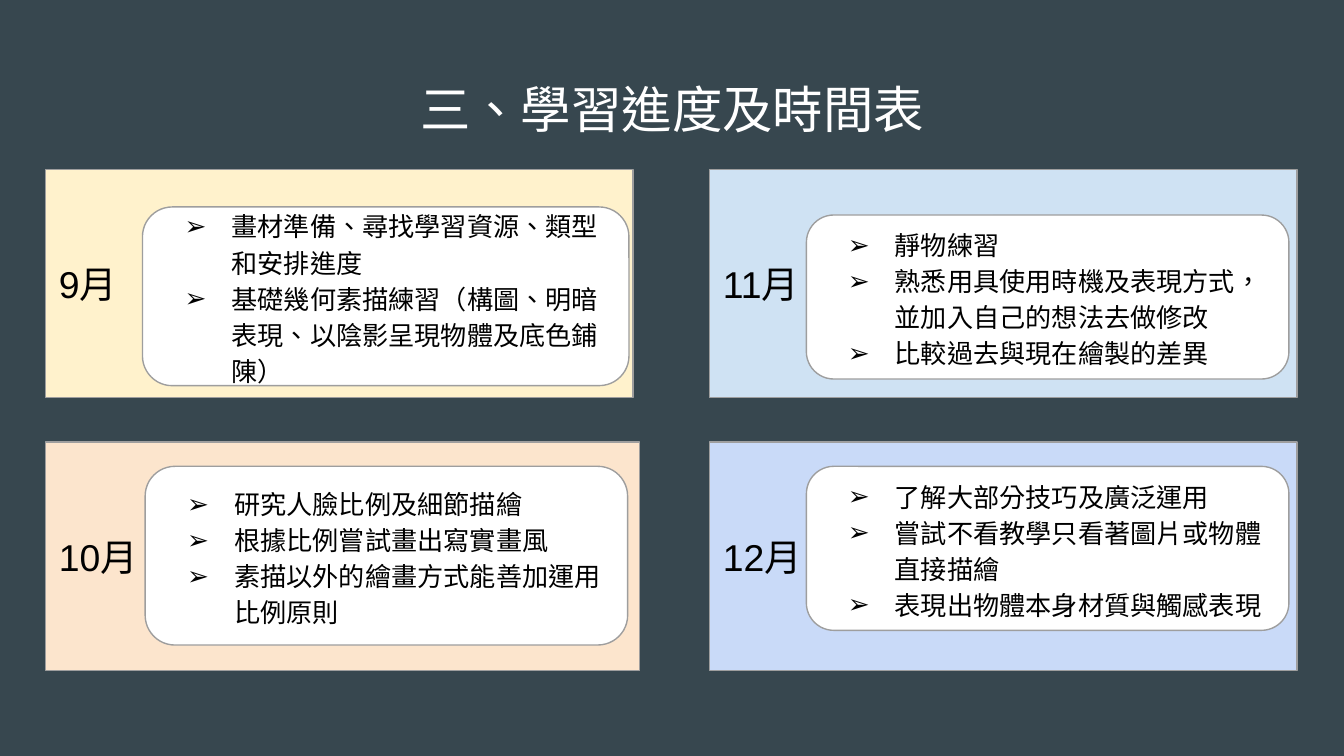
"""Build the slide with the four-month learning schedule."""
from lxml import etree
from pptx import Presentation
from pptx.dml.color import RGBColor
from pptx.enum.lang import MSO_LANGUAGE_ID
from pptx.enum.shapes import MSO_SHAPE
from pptx.enum.text import MSO_ANCHOR, PP_ALIGN
from pptx.oxml.ns import qn
from pptx.util import Inches, Pt

RECTANGLE, ROUNDED = MSO_SHAPE.RECTANGLE, MSO_SHAPE.ROUNDED_RECTANGLE
MIDDLE = MSO_ANCHOR.MIDDLE
LEFT, CENTER = PP_ALIGN.LEFT, PP_ALIGN.CENTER
CHINESE = MSO_LANGUAGE_ID.TRADITIONAL_CHINESE

SLATE = RGBColor(0x37, 0x47, 0x4F)
WHITE = RGBColor(0xFF, 0xFF, 0xFF)
BLACK = RGBColor(0x00, 0x00, 0x00)
GRAY = RGBColor(0x9E, 0x9E, 0x9E)
YELLOW = RGBColor(0xFF, 0xF2, 0xCC)
PEACH = RGBColor(0xFC, 0xE5, 0xCD)
SKY = RGBColor(0xCF, 0xE2, 0xF3)
PERIWINKLE = RGBColor(0xC9, 0xDA, 0xF8)

LEFT_COLUMN, RIGHT_COLUMN = 0.34, 5.28
TOP_ROW, BOTTOM_ROW = 1.26, 3.29
PANEL_HEIGHT = 1.7

MONTHS = [
    ("9月", YELLOW, (LEFT_COLUMN, TOP_ROW, 4.37), (1.06, 1.54, 3.62, 1.33),
     ["畫材準備、尋找學習資源、類型和安排進度",
      "基礎幾何素描練習（構圖、明暗表現、以陰影呈現物體及底色鋪陳）"]),
    ("10月", PEACH, (LEFT_COLUMN, BOTTOM_ROW, 4.42), (1.08, 3.47, 3.59, 1.33),
     ["研究人臉比例及細節描繪",
      "根據比例嘗試畫出寫實畫風",
      "素描以外的繪畫方式能善加運用比例原則"]),
    ("11月", SKY, (RIGHT_COLUMN, TOP_ROW, 4.37), (6, 1.6, 3.59, 1.22),
     ["靜物練習",
      "熟悉用具使用時機及表現方式，並加入自己的想法去做修改",
      "比較過去與現在繪製的差異"]),
    ("12月", PERIWINKLE, (RIGHT_COLUMN, BOTTOM_ROW, 4.37), (6, 3.47, 3.59, 1.22),
     ["了解大部分技巧及廣泛運用",
      "嘗試不看教學只看著圖片或物體直接描繪",
      "表現出物體本身材質與觸感表現"]),
]


def write(shape, lines, size, color, align=LEFT, font="Arial", bullet=None):
    frame = shape.text_frame
    frame.word_wrap = True
    frame.vertical_anchor = MIDDLE
    frame.margin_left = frame.margin_right = Inches(0.1)
    frame.margin_top = frame.margin_bottom = Inches(0.1)
    frame.text = "\n".join(lines)
    for paragraph in frame.paragraphs:
        paragraph.alignment = align
        if bullet:
            paragraph.line_spacing = 1.15
            properties = paragraph._p.get_or_add_pPr()
            properties.set("marL", str(Inches(0.5)))
            properties.set("indent", str(Inches(-0.35)))
            bullet_color = etree.SubElement(properties, qn("a:buClr"))
            etree.SubElement(bullet_color, qn("a:srgbClr"), val=str(color))
            etree.SubElement(properties, qn("a:buFont"), typeface=font)
            etree.SubElement(properties, qn("a:buChar"), char=bullet)
        paragraph.font.size = Pt(size)
        paragraph.font.name = font
        paragraph.font.color.rgb = color
        for run in paragraph.runs:
            run.font.language_id = CHINESE


def add_box(kind, bounds, fill):
    box = slide.shapes.add_shape(kind, *map(Inches, bounds))
    box.shadow.inherit = False
    box.fill.solid()
    box.fill.fore_color.rgb = fill
    box.line.color.rgb = GRAY
    box.line.width = Pt(0.75)
    return box


prs = Presentation()
prs.slide_width = Inches(10)
prs.slide_height = prs.slide_width * 9 // 16
slide = prs.slides.add_slide(prs.slide_layouts[6])
slide.background.fill.solid()
slide.background.fill.fore_color.rgb = SLATE

title = slide.shapes.add_textbox(Inches(0.34), Inches(0.49), Inches(9.32), Inches(0.63))
write(title, ["三、學習進度及時間表"], 27, WHITE, CENTER, "Arial Narrow")

for month, tint, panel_bounds, card_bounds, goals in MONTHS:
    panel = add_box(RECTANGLE, (*panel_bounds, PANEL_HEIGHT), tint)
    write(panel, [month], 20, BLACK)
    card = add_box(ROUNDED, card_bounds, WHITE)
    write(card, goals, 14, BLACK, bullet="➢")

prs.save("out.pptx")
